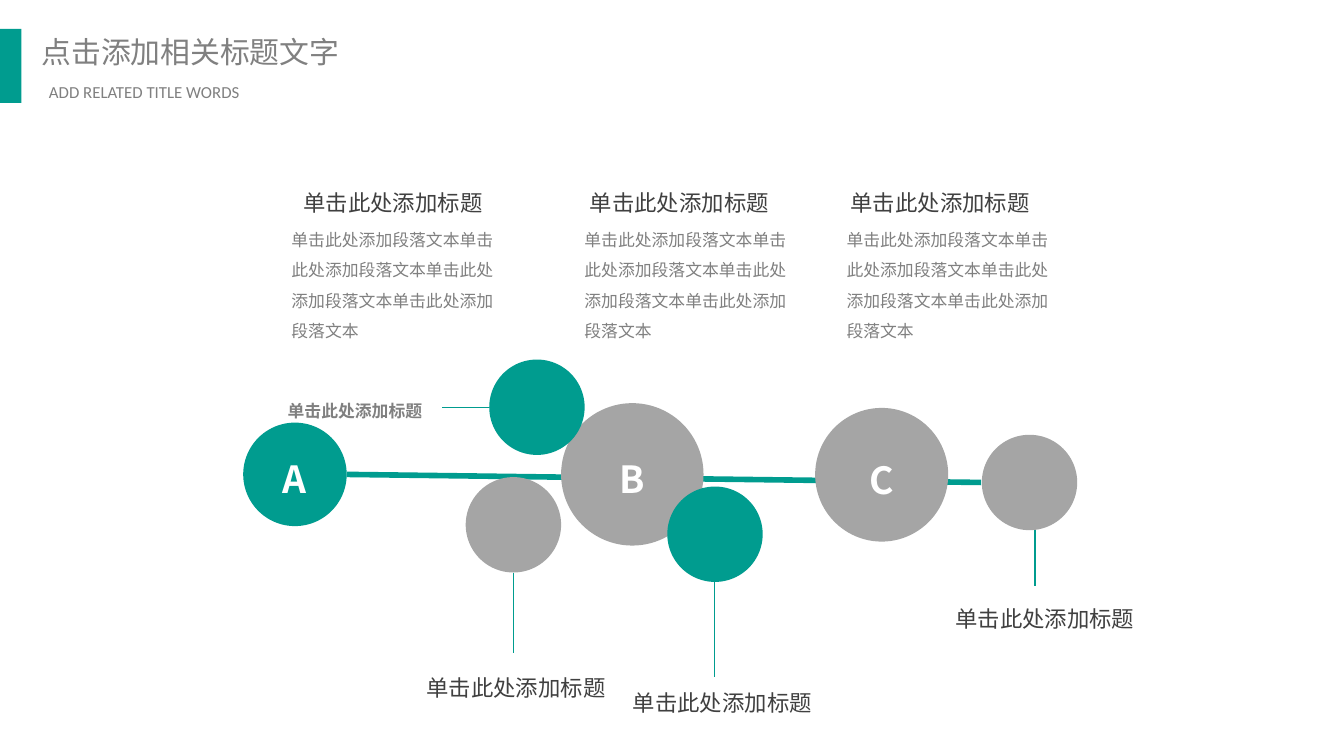
from lxml import etree
from pptx import Presentation
from pptx.dml.color import RGBColor
from pptx.enum.shapes import MSO_CONNECTOR, MSO_SHAPE
from pptx.enum.text import MSO_ANCHOR, PP_ALIGN
from pptx.oxml.ns import qn
from pptx.util import Inches, Pt

TEAL = RGBColor(0x00, 0x9C, 0x8F)
GRAY = RGBColor(0xA5, 0xA5, 0xA5)
MID = RGBColor(0x80, 0x80, 0x80)
DARK = RGBColor(0x40, 0x40, 0x40)
WHITE = RGBColor(0xFF, 0xFF, 0xFF)
LINE, RECT, OVAL = MSO_CONNECTOR.STRAIGHT, MSO_SHAPE.RECTANGLE, MSO_SHAPE.OVAL
LEFT, MIDDLE, JUST = PP_ALIGN.LEFT, PP_ALIGN.CENTER, PP_ALIGN.JUSTIFY
TOP, CENTER = MSO_ANCHOR.TOP, MSO_ANCHOR.MIDDLE
SANS = "Noto Sans CJK SC"
HEAD = "单击此处添加标题"
BODY = "单击此处添加段落文本" * 4

deck = Presentation()
deck.slide_width = Inches(10)
deck.slide_height = deck.slide_width * 9 // 16
U = deck.slide_width // 100  # square grid, 100 columns wide
slide = deck.slides.add_slide(deck.slide_layouts[5])
shapes = slide.shapes


def cells(*nums):
    return [round(n * U) for n in nums]


def write(shape, text, size, color, align=MIDDLE, space=1.2, bold=False,
          face=SANS, inset=0.8, anchor=TOP, wrap=True):
    frame = shape.text_frame
    frame.text = text
    frame.word_wrap = wrap
    frame.vertical_anchor = anchor
    frame.margin_left, frame.margin_right = cells(inset, inset)
    frame.margin_top, frame.margin_bottom = cells(inset / 2, inset / 2)
    para = frame.paragraphs[0]
    para.alignment, para.line_spacing = align, space
    font = para.font
    font.name, font.size, font.bold = face, Pt(size), bold
    font.color.rgb = color
    # East Asian glyphs take their own typeface entry
    props = para._p.pPr.find(qn("a:defRPr"))
    etree.SubElement(props, qn("a:ea"), typeface=face)


# Header: bar, title, subtitle
bar = shapes.add_shape(RECT, *cells(0, 2.15, 1.6, 5.5))
bar.shadow.inherit = False
bar.fill.solid()
bar.fill.fore_color.rgb = TEAL
bar.line.fill.background()

title = shapes.title
title.left, title.top, title.width, title.height = cells(2.3, 2.1, 24, 3.5)
write(title, "点击添加相关标题文字", 16, MID, LEFT, 1, wrap=False)
sub = shapes.add_textbox(*cells(2.85, 5.7, 22.3, 2.3))
write(sub, "ADD RELATED TITLE WORDS", 9, MID, JUST, 1, face="Calibri")

# Lines: four thin leaders and the thick axis, behind the circles
for x1, y1, x2, y2, wide in [
    (36.4, 30.3, 32.9, 30.3, 0.75),
    (77, 39.4, 77, 43.6, 0.75),
    (38.2, 42.6, 38.2, 48.6, 0.75),
    (53.15, 43.3, 53.15, 50.35, 0.75),
    (25.8, 35.3, 73, 35.9, 3),
]:
    line = shapes.add_connector(LINE, *cells(x1, y1, x2, y2))
    line.line.color.rgb = TEAL
    line.line.width = Pt(wide)
    etree.SubElement(line._element.spPr, qn("a:effectLst"))

# Circles: lettered stops, then the small ones
for mark, x, y, wide, high, color in [
    ("A", 18.1, 31.45, 7.7, 7.7, TEAL),
    ("B", 41.75, 30, 10.6, 10.6, GRAY),
    ("C", 60.65, 30.35, 9.9, 9.95, GRAY),
    ("", 73.05, 32.35, 7.1, 7.1, GRAY),
    ("", 36.4, 26.75, 7.1, 7.1, TEAL),
    ("", 34.65, 35.5, 7.1, 7.1, GRAY),
    ("", 49.65, 36.2, 7.1, 7.1, TEAL),
]:
    disc = shapes.add_shape(OVAL, *cells(x, y, wide, high))
    disc.shadow.inherit = False
    disc.fill.solid()
    disc.fill.fore_color.rgb = color
    disc.line.fill.background()
    if mark:
        write(disc, mark, 20, WHITE, bold=True, anchor=CENTER)

# Three columns of heading and body
for x, top, low in [(20.7, 17.1, 17.9), (42.5, 16.1, 17.3), (62, 15.9, 17.9)]:
    head = shapes.add_textbox(*cells(x, 13.2, top, 3.4))
    write(head, HEAD, 12, DARK, inset=1)
    body = shapes.add_textbox(*cells(x, 15.85, low, 10.1))
    write(body, BODY, 9, MID, LEFT, 1.5, inset=1)

# Labels at the ends of the leaders
for x, y, wide, high, size, color, bold in [
    (29.15, 49.35, 18.5, 3.2, 12, DARK, False),
    (19.3, 29.1, 14.2, 2.6, 9, MID, True),
    (44.5, 50.45, 18.5, 3.2, 12, DARK, False),
    (68.5, 44.25, 18.5, 3.2, 12, DARK, False),
]:
    label = shapes.add_textbox(*cells(x, y, wide, high))
    write(label, HEAD, size, color, bold=bold)

deck.save("out.pptx")
